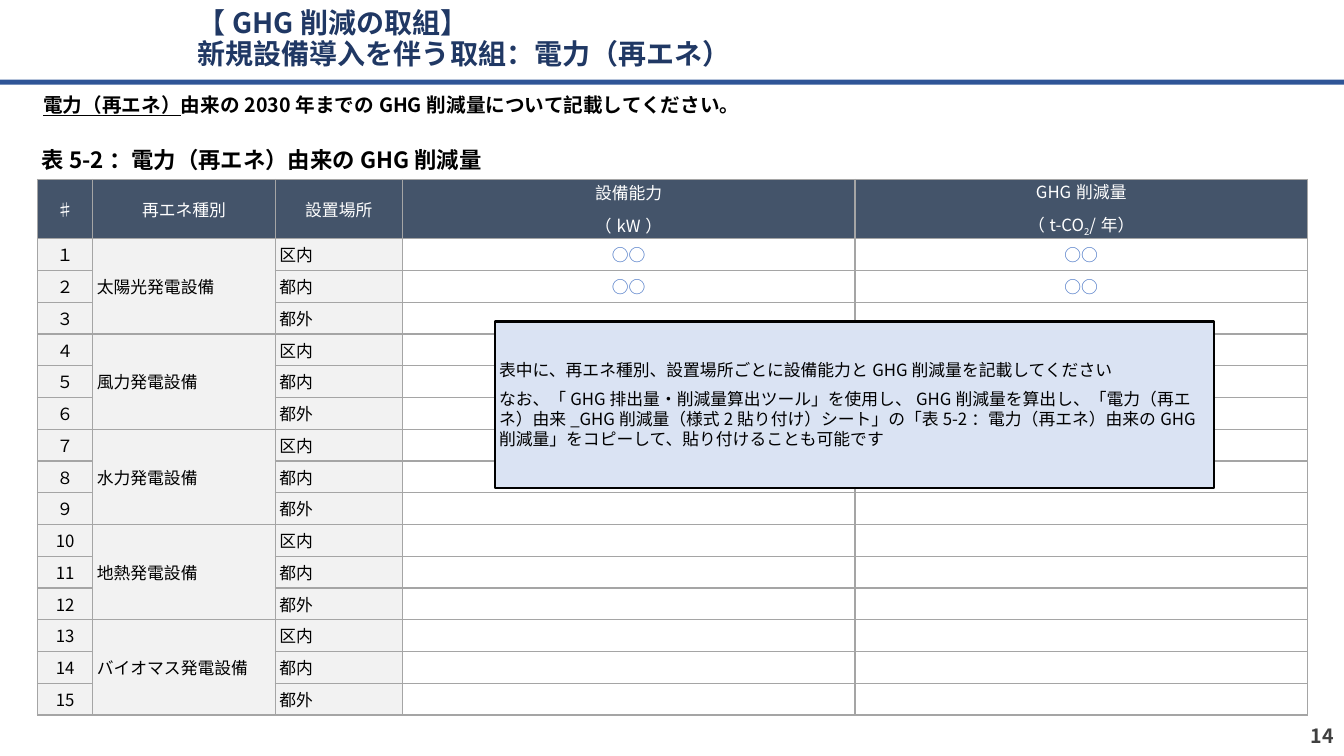
from dataclasses import dataclass
from typing import Optional

from lxml.etree import SubElement
from pptx import Presentation
from pptx.dml.color import RGBColor
from pptx.enum.shapes import MSO_SHAPE
from pptx.enum.text import MSO_ANCHOR, MSO_AUTO_SIZE, PP_ALIGN
from pptx.oxml.ns import qn
from pptx.util import Inches, Length, Pt

FONT = "Noto Sans CJK JP"
WHITE = RGBColor(0xFF, 0xFF, 0xFF)
BLACK = RGBColor(0x00, 0x00, 0x00)
NAVY = RGBColor(0x20, 0x38, 0x64)
RULE_BLUE = RGBColor(0x2F, 0x55, 0x97)
HEADER_SLATE = RGBColor(0x44, 0x54, 0x6A)
LABEL_GRAY = RGBColor(0xF2, 0xF2, 0xF2)
BORDER_GRAY = RGBColor(0xA5, 0xA5, 0xA5)
ENTRY_BLUE = RGBColor(0x44, 0x72, 0xC4)
NOTE_BLUE = RGBColor(0xDA, 0xE3, 0xF3)
PAGE_GRAY = RGBColor(0x40, 0x40, 0x40)

SLIDE_WIDTH, SLIDE_HEIGHT = Inches(13.33), Inches(7.5)
MARGIN, CONTENT_WIDTH = 2.78, 94.52  # percent of the slide width
COLUMN_WIDTHS = (4.13, 13.58, 9.45, 33.68, 33.68)  # percent of the slide width
HEADER_HEIGHT, ROW_HEIGHT = 7.33, 4.2  # percent of the slide height

ENERGY_TYPES = ("太陽光発電設備", "風力発電設備", "水力発電設備", "地熱発電設備", "バイオマス発電設備")
PLACES = ("区内", "都内", "都外")
NUMBERS = (*"１２３４５６７８９", "10", "11", "12", "13", "14", "15")
SAMPLE_ROWS = 2


@dataclass(frozen=True)
class Piece:
    text: str
    underline: bool = False
    subscript: bool = False


@dataclass(frozen=True)
class Style:
    size: float = 12
    color: RGBColor = BLACK
    bold: bool = False
    align: PP_ALIGN = PP_ALIGN.LEFT
    line_spacing: Optional[float] = None


@dataclass(frozen=True)
class Area:
    """A rectangle in percent of the slide's width and height."""
    left: float
    top: float
    width: float
    height: float

    def box(self) -> tuple[Length, Length, Length, Length]:
        return across(self.left), down(self.top), across(self.width), down(self.height)


Lines = tuple[tuple[Piece, ...], ...]

HEADINGS: tuple[Lines, ...] = (
    ((Piece("♯"),),),
    ((Piece("再エネ種別"),),),
    ((Piece("設置場所"),),),
    ((Piece("設備能力"),), (Piece("（kW）"),)),
    ((Piece("GHG削減量"),), (Piece("（t-CO"), Piece("2", subscript=True), Piece("/年）"))),
)
HEADING = Style(color=WHITE, align=PP_ALIGN.CENTER)
NUMBER = Style(align=PP_ALIGN.CENTER)
ENTRY = Style(color=ENTRY_BLUE, align=PP_ALIGN.CENTER)


def across(percent: float) -> Length:
    return Length(round(SLIDE_WIDTH * percent / 100))


def down(percent: float) -> Length:
    return Length(round(SLIDE_HEIGHT * percent / 100))


def write(frame, lines: Lines, style: Style) -> None:
    for index, pieces in enumerate(lines):
        paragraph = frame.paragraphs[0] if index == 0 else frame.add_paragraph()
        paragraph.alignment = style.align
        paragraph.space_before = Pt(6 if index else 0)
        if style.line_spacing:
            paragraph.line_spacing = style.line_spacing
        for piece in pieces:
            for part, text in enumerate(piece.text.split("\n")):
                if part:
                    paragraph.add_line_break()
                run = paragraph.add_run()
                run.text = text
                run.font.name = FONT
                run.font.size = Pt(style.size)
                run.font.bold = style.bold
                run.font.underline = piece.underline
                run.font.color.rgb = style.color
                properties = run._r.get_or_add_rPr()
                SubElement(properties, qn("a:ea"), typeface=FONT)
                if piece.subscript:
                    properties.set("baseline", "-25000")


def fill_frame(frame, lines: Lines, style: Style, tight: bool = True) -> None:
    frame.word_wrap = True
    frame.auto_size = MSO_AUTO_SIZE.NONE
    frame.vertical_anchor = MSO_ANCHOR.MIDDLE
    if tight:
        frame.margin_left = frame.margin_right = across(0.3)
        frame.margin_top = frame.margin_bottom = 0
    write(frame, lines, style)


def add_panel(slide, kind: MSO_SHAPE, area: Area, fill: Optional[RGBColor] = None,
              outline: Optional[RGBColor] = None):
    panel = slide.shapes.add_shape(kind, *area.box())
    panel.shadow.inherit = False
    if fill is None:
        panel.fill.background()
    else:
        panel.fill.solid()
        panel.fill.fore_color.rgb = fill
    if outline is None:
        panel.line.fill.background()
    else:
        panel.line.color.rgb = outline
        panel.line.width = Pt(1.5)
    return panel


def format_cell(cell, fill: Optional[RGBColor], lines: Lines = (), style: Style = NUMBER) -> None:
    cell.vertical_anchor = MSO_ANCHOR.MIDDLE
    cell.margin_left = cell.margin_right = across(0.3)
    cell.margin_top = cell.margin_bottom = 0
    properties = cell._tc.get_or_add_tcPr()
    for side in ("lnL", "lnR", "lnT", "lnB"):
        border = SubElement(properties, qn(f"a:{side}"), w=str(Pt(1)))
        SubElement(SubElement(border, qn("a:solidFill")), qn("a:srgbClr"), val=str(BORDER_GRAY))
    if fill is None:
        cell.fill.background()
    else:
        cell.fill.solid()
        cell.fill.fore_color.rgb = fill
    if lines:
        write(cell.text_frame, lines, style)
    else:
        # Keeps a blank row as low as the written ones
        SubElement(cell.text_frame.paragraphs[0]._p, qn("a:endParaRPr"), sz="1200")


def add_reduction_table(slide) -> None:
    count = len(NUMBERS)
    area = Area(MARGIN, 23.73, CONTENT_WIDTH, HEADER_HEIGHT + count * ROW_HEIGHT)
    table = slide.shapes.add_table(count + 1, len(COLUMN_WIDTHS), *area.box()).table
    table.horz_banding = False
    for column, width in zip(table.columns, COLUMN_WIDTHS):
        column.width = across(width)
    for index, row in enumerate(table.rows):
        row.height = down(ROW_HEIGHT if index else HEADER_HEIGHT)

    for column, heading in enumerate(HEADINGS):
        format_cell(table.cell(0, column), HEADER_SLATE, heading, HEADING)
    for row, number in enumerate(NUMBERS, start=1):
        group, position = divmod(row - 1, len(PLACES))
        energy: Lines = () if position else ((Piece(ENERGY_TYPES[group]),),)
        entry: Lines = ((Piece("○○"),),) if row <= SAMPLE_ROWS else ()
        format_cell(table.cell(row, 0), LABEL_GRAY, ((Piece(number),),), NUMBER)
        format_cell(table.cell(row, 1), LABEL_GRAY, energy, Style())
        format_cell(table.cell(row, 2), LABEL_GRAY, ((Piece(PLACES[position]),),), Style())
        for column in (3, 4):
            format_cell(table.cell(row, column), None, entry, ENTRY)
    for first in range(1, count + 1, len(PLACES)):
        table.cell(first, 1).merge(table.cell(first + len(PLACES) - 1, 1))


def main() -> None:
    presentation = Presentation()
    presentation.slide_width, presentation.slide_height = SLIDE_WIDTH, SLIDE_HEIGHT
    slide = presentation.slides.add_slide(presentation.slide_layouts[5])

    # Title and the rule below it
    title = slide.shapes.title
    title.left, title.top, title.width, title.height = Area(13.95, 0, 79.14, 10.53).box()
    fill_frame(title.text_frame, ((Piece("【GHG削減の取組】\n新規設備導入を伴う取組：電力（再エネ）"),),),
               Style(20, NAVY, True, line_spacing=0.9), tight=False)
    add_panel(slide, MSO_SHAPE.RECTANGLE, Area(0, 10.53, 100, 0.67), RULE_BLUE)

    # Table of reductions
    add_reduction_table(slide)

    # Page number
    page_number = slide.shapes.add_textbox(*Area(77.5, 94.67, 22.5, 5.33).box())
    fill_frame(page_number.text_frame, ((Piece("14"),),),
               Style(14, PAGE_GRAY, True, PP_ALIGN.RIGHT), tight=False)

    # Instruction and table caption
    instruction = add_panel(slide, MSO_SHAPE.ROUNDED_RECTANGLE, Area(MARGIN, 11.2, CONTENT_WIDTH, 5.2))
    fill_frame(instruction.text_frame, ((
        Piece("電力（再エネ）", underline=True),
        Piece("由来の2030年までのGHG削減量について記載してください。")),), Style(14, bold=True))
    caption = slide.shapes.add_textbox(*Area(MARGIN, 18.53, 50.19, 5.2).box())
    fill_frame(caption.text_frame, ((Piece("表5-2：電力（再エネ）由来のGHG削減量"),),), Style(16, bold=True))

    # Note over the table
    note = add_panel(slide, MSO_SHAPE.RECTANGLE, Area(36.83, 42.53, 53.49, 22), NOTE_BLUE, BLACK)
    fill_frame(note.text_frame, (
        (Piece("表中に、再エネ種別、設置場所ごとに設備能力とGHG削減量を記載してください"),),
        (Piece("なお、「GHG排出量・削減量算出ツール」を使用し、GHG削減量を算出し、「電力（再エネ）由来_GHG削減量"
               "（様式2貼り付け）シート」の「表5-2：電力（再エネ）由来のGHG削減量」をコピーして、貼り付けることも可能です"),),
    ), Style())

    presentation.save("out.pptx")


if __name__ == "__main__":
    main()
